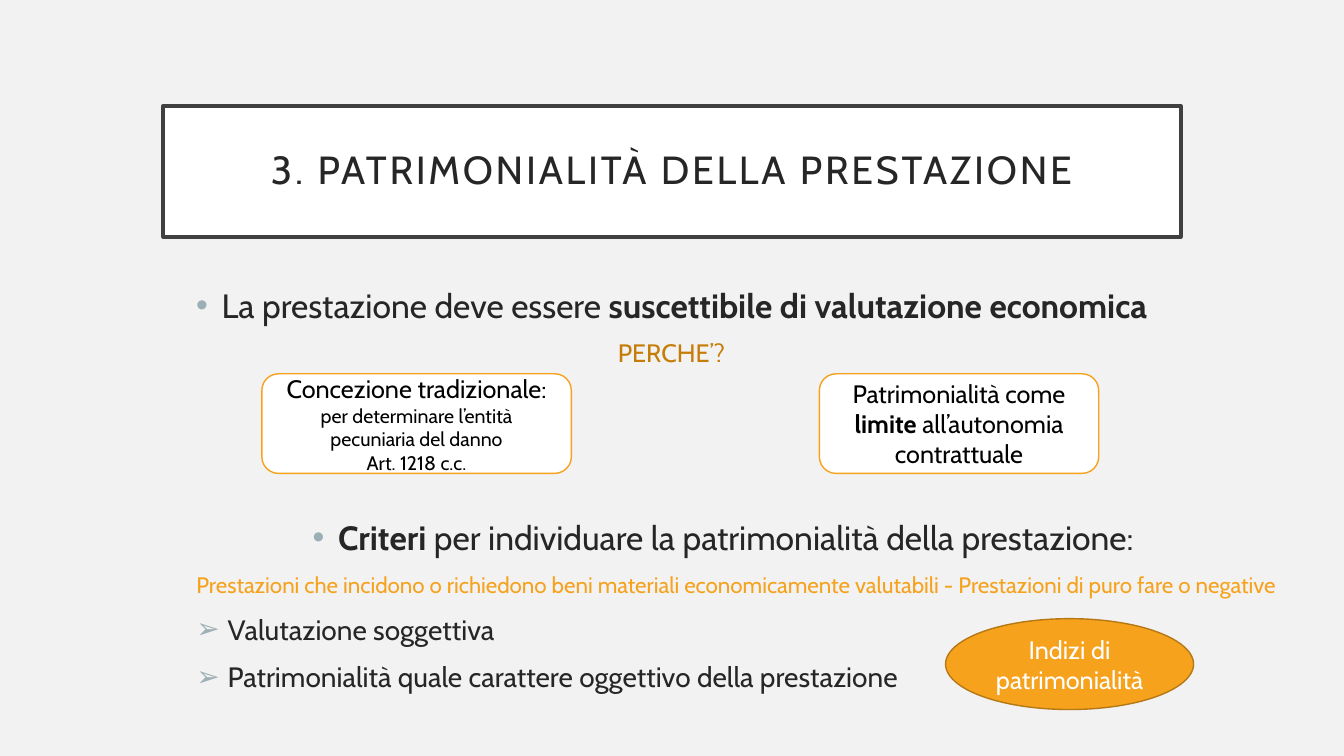
from lxml import etree
from pptx import Presentation
from pptx.dml.color import RGBColor
from pptx.enum.shapes import MSO_SHAPE as SHAPE
from pptx.enum.text import MSO_ANCHOR as ANCHOR, PP_ALIGN as ALIGN
from pptx.oxml.ns import qn
from pptx.util import Cm, Pt

FONT = "Cabin"
BACKGROUND = RGBColor(0xF2, 0xF2, 0xF2)
WHITE = RGBColor(0xFF, 0xFF, 0xFF)
BLACK = RGBColor(0, 0, 0)
INK = RGBColor(0x26, 0x26, 0x26)
FRAME = RGBColor(0x40, 0x40, 0x40)
ORANGE = RGBColor(0xF6, 0xA2, 0x1D)
DARK_ORANGE = RGBColor(0xC6, 0x7D, 0x08)
BROWN = RGBColor(0xB6, 0x78, 0x15)
BULLET = RGBColor(0x9B, 0xAF, 0xB5)


def place(sp, box):
    for name, value in zip(("left", "top", "width", "height"), box):
        setattr(sp, name, Cm(value))


def paint(sp, fill, line, width):
    sp.fill.solid()
    sp.fill.fore_color.rgb = fill
    sp.line.color.rgb = line
    sp.line.width = Pt(width)


def set_bullet(p, char, indent, hanging):
    """Indents are in cm; without a char the paragraph has no bullet."""
    pPr = p._p.get_or_add_pPr()
    pPr.set("marL", str(Cm(indent)))
    pPr.set("indent", str(-Cm(hanging)))
    if char:
        color = etree.SubElement(pPr, qn("a:buClr"))
        etree.SubElement(color, qn("a:srgbClr")).set("val", str(BULLET))
        etree.SubElement(pPr, qn("a:buFont")).set("typeface", "Arial")
        etree.SubElement(pPr, qn("a:buChar")).set("char", char)
    else:
        etree.SubElement(pPr, qn("a:buNone"))


def write(sp, paragraphs):
    """Each paragraph: runs of (text, bold), size, colour, format, bullet."""
    tf = sp.text_frame
    tf.word_wrap = True
    for i, (runs, size, color, fmt, bullet) in enumerate(paragraphs):
        p = tf.add_paragraph() if i else tf.paragraphs[0]
        for name, value in fmt.items():
            setattr(p, name, value)
        if bullet:
            set_bullet(p, *bullet)
        for text, bold in runs:
            r = p.add_run()
            r.text = text
            r.font.color.rgb = color
            for name, value in dict(name=FONT, size=Pt(size), bold=bold).items():
                setattr(r.font, name, value)


def add_title(s, box):
    sp = s.shapes.title
    place(sp, box)
    paint(sp, WHITE, FRAME, 2.5)
    fmt = dict(alignment=ALIGN.CENTER, line_spacing=0.9)
    write(sp, [([("3. PATRIMONIALITÀ DELLA PRESTAZIONE", False)], 28, INK, fmt, None)])
    tf = sp.text_frame
    tf.vertical_anchor = ANCHOR.MIDDLE
    for side in ("left", "top", "right", "bottom"):
        setattr(tf, f"margin_{side}", Cm(0.5))
    tf.paragraphs[0].runs[0].font._element.set("spc", "200")


def add_requirement(s, box):
    sp = s.placeholders[1]
    place(sp, box)
    runs = [("La prestazione deve essere ", False),
            ("suscettibile di valutazione economica", True)]
    fmt = dict(alignment=ALIGN.CENTER, space_before=Pt(0))
    write(sp, [(runs, 24, INK, fmt, ("•", 0.64, 0.64))])


def add_bubble(s, kind, box, fill, line, color, paragraphs):
    """Outlined shape with centred text; paragraphs are (runs, size)."""
    sp = s.shapes.add_shape(kind, *map(Cm, box))
    sp.shadow.inherit = False
    paint(sp, fill, line, 1)
    sp.text_frame.vertical_anchor = ANCHOR.MIDDLE
    fmt = dict(alignment=ALIGN.CENTER)
    write(sp, [(runs, size, color, fmt, None) for runs, size in paragraphs])


def add_reasons(s, box):
    left, top, width, height = box
    # Question above the two answers
    sp = s.shapes.add_textbox(Cm(left + 8.72), Cm(top), Cm(3.28), Cm(1.02))
    write(sp, [([("PERCHE’?", False)], 18, DARK_ORANGE, {}, None)])
    # Answers: offset and width inside the box
    traditional = [([("Concezione tradizionale:", False)], 18),
                   ([("per determinare l’entità pecuniaria del danno", False)], 14),
                   ([("Art. 1218 c.c.", False)], 14)]
    limit = [([("Patrimonialità come ", False), ("limite", True),
               (" all’autonomia contrattuale", False)], 18)]
    drop = 1.04
    for dx, w, paragraphs in ((0, 7.8, traditional), (width - 7.04, 7.04, limit)):
        add_bubble(s, SHAPE.ROUNDED_RECTANGLE, (left + dx, top + drop, w, height - drop),
                   WHITE, ORANGE, BLACK, paragraphs)


def add_criteria(s, box):
    left, top, width, height = box
    sp = s.shapes.add_textbox(*map(Cm, box))
    criteria = [("Criteri ", True),
                ("per individuare la patrimonialità della prestazione:", False)]
    examples = ("Prestazioni che incidono o richiedono beni materiali "
                "economicamente valutabili - Prestazioni di puro fare o negative")
    sub = dict(level=1, space_before=Pt(10))
    arrow = ("➢", 2.06, 0.79)
    write(sp, [
        (criteria, 24, INK, dict(alignment=ALIGN.CENTER), ("•", 0.64, 0.64)),
        ([(examples, False)], 16, ORANGE, sub, (None, 1.27, 0)),
        ([("Valutazione soggettiva", False)], 20, INK, sub, arrow),
        ([("Patrimonialità quale carattere oggettivo della prestazione", False)],
         20, INK, sub, arrow),
    ])
    # Label at the lower right
    add_bubble(s, SHAPE.OVAL, (left + 20.4, top + 2.69, 6.25, 2.29), ORANGE, BROWN, WHITE,
               [([("Indizi di patrimonialità", False)], 18)])


def main():
    prs = Presentation()
    prs.slide_width, prs.slide_height = Cm(33.87), Cm(19.05)
    s = prs.slides.add_slide(prs.slide_layouts[1])
    s.background.fill.solid()
    s.background.fill.fore_color.rgb = BACKGROUND
    add_title(s, (4.11, 2.67, 25.65, 3.3))
    add_requirement(s, (4.11, 7.06, 25.63, 1.57))
    add_reasons(s, (6.6, 8.38, 21.09, 3.55))
    add_criteria(s, (3.43, 12.9, 29.59, 4.75))
    prs.save("out.pptx")


if __name__ == "__main__":
    main()
